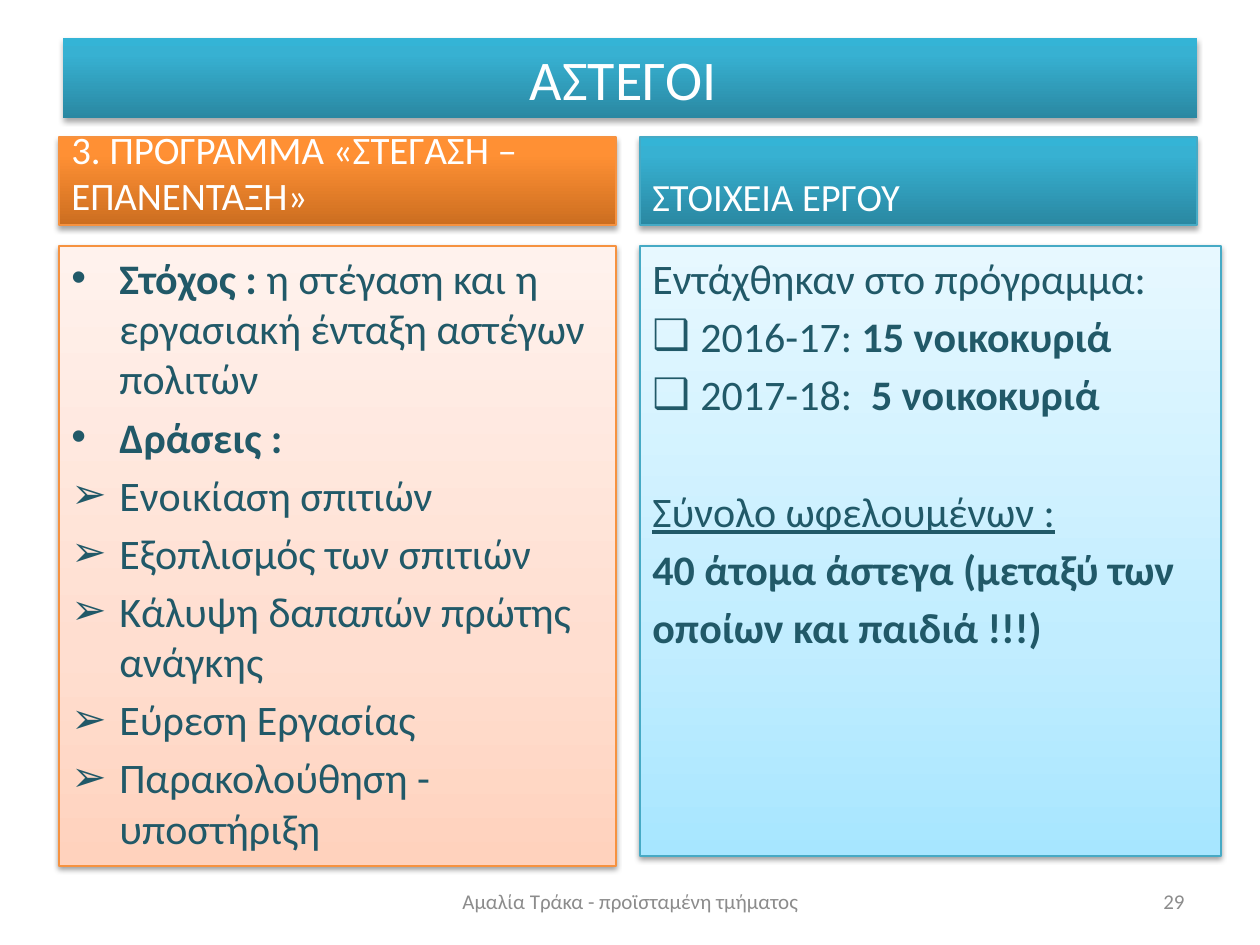
from dataclasses import dataclass
from typing import Optional

from lxml import etree
from pptx import Presentation, util as u
from pptx.dml.color import RGBColor
from pptx.enum import shapes, text
from pptx.oxml import ns

EMU_PER_PX = 914400 / 126
FONT = "Calibri"
WHITE, GREY, INK = "FFFFFF", "8C8C8C", "215968"
HANGING = 48
TEAL = ((0, "2A88A2"), (80, "37B1D2"), (100, "34B4D6"))
ORANGE = ((0, "CC6E20"), (80, "FF9034"), (100, "FF9136"))
PALE_TEAL = ((0, "A7E6FF"), (35, "C1EDFF"), (100, "E7F8FF"))
PALE_ORANGE = ((0, "FFD2BD"), (35, "FFDED0"), (100, "FFF2ED"))
TEAL_EDGE, ORANGE_EDGE = "46AAC5", "F69240"
HEADER_TOP, HEADER_HEIGHT, BODY_TOP, COLUMN_WIDTH = 137, 88, 246, 557


@dataclass(frozen=True)
class Run:
    words: str
    bold: bool = False
    underline: bool = False


@dataclass(frozen=True)
class Item:
    runs: tuple[Run, ...]
    bullet: str = ""
    before: float = 4.4


@dataclass(frozen=True)
class Column:
    left: int
    body_width: int
    body_height: int
    heading: str
    heading_size: float
    heading_fill: tuple
    body_fill: tuple
    edge: str
    items: tuple[Item, ...]


COLUMNS = (
    Column(59, COLUMN_WIDTH, 620, "3. ΠΡΟΓΡΑΜΜΑ «ΣΤΕΓΑΣΗ – ΕΠΑΝΕΝΤΑΞΗ»", 22.2,
           ORANGE, PALE_ORANGE, ORANGE_EDGE, (
               Item((Run("Στόχος :", bold=True),
                     Run(" η στέγαση και η εργασιακή ένταξη αστέγων πολιτών")), "•"),
               Item((Run("Δράσεις :", bold=True),), "•"),
               Item((Run("Ενοικίαση σπιτιών"),), "➢"),
               Item((Run("Εξοπλισμός των σπιτιών"),), "➢"),
               Item((Run("Κάλυψη δαπαπών πρώτης ανάγκης"),), "➢"),
               Item((Run("Εύρεση Εργασίας"),), "➢"),
               Item((Run("Παρακολούθηση - υποστήριξη"),), "➢"))),
    Column(640, 581, 610, "ΣΤΟΙΧΕΙΑ ΕΡΓΟΥ", 22,
           TEAL, PALE_TEAL, TEAL_EDGE, (
               Item((Run("Εντάχθηκαν στο πρόγραμμα:"),)),
               Item((Run("2016-17: "), Run("15 νοικοκυριά", bold=True)), "❑"),
               Item((Run("2017-18:  "), Run("5 νοικοκυριά", bold=True)), "❑"),
               Item((Run("Σύνολο ωφελουμένων :", underline=True),), before=38),
               Item((Run("40 άτομα άστεγα (μεταξύ των", bold=True),)),
               Item((Run("οποίων και παιδιά !!!)", bold=True),)))),
)


def px(length: int) -> u.Emu:
    return u.Emu(round(length * EMU_PER_PX))


def rgb(colour: str) -> RGBColor:
    return RGBColor.from_string(colour)


def add_xml(parent, tag: str, **attributes):
    return etree.SubElement(parent, ns.qn(tag), attributes)


def fill_upwards(shape, stops: tuple) -> None:
    """Blend the stops from the bottom edge to the top edge."""
    shape.fill.gradient()
    shape.fill.gradient_angle = 90
    stop_list = shape.element.spPr.find(".//" + ns.qn("a:gsLst"))
    for old_stop in list(stop_list):
        stop_list.remove(old_stop)
    for position, colour in stops:
        stop = add_xml(stop_list, "a:gs", pos=str(position * 1000))
        add_xml(stop, "a:srgbClr", val=colour)


def drop_shadow(shape, opacity: int, distance: float) -> None:
    shape.shadow.inherit = False
    effects = shape.element.spPr.find(ns.qn("a:effectLst"))
    shadow = add_xml(effects, "a:outerShdw", blurRad=str(u.Pt(3.1)),
                     dist=str(u.Pt(distance)), dir="5400000", rotWithShape="0")
    colour = add_xml(shadow, "a:srgbClr", val="000000")
    add_xml(colour, "a:alpha", val=str(opacity * 1000))


def add_panel(slide, left: int, top: int, width: int, height: int, stops: tuple,
              edge: Optional[str] = None, opacity: int = 35, distance: float = 1.8):
    panel = slide.shapes.add_shape(shapes.MSO_SHAPE.RECTANGLE,
                                   px(left), px(top), px(width), px(height))
    fill_upwards(panel, stops)
    if edge:
        panel.line.color.rgb = rgb(edge)
        panel.line.width = u.Pt(0.75)
    else:
        panel.line.fill.background()
    drop_shadow(panel, opacity, distance)
    return panel


def write(shape, items: tuple[Item, ...], *, size: float, colour: str,
          align=text.PP_ALIGN.LEFT, anchor=text.MSO_ANCHOR.MIDDLE,
          hanging: int = 0) -> None:
    frame = shape.text_frame
    frame.word_wrap = True
    frame.vertical_anchor = anchor
    for number, item in enumerate(items):
        paragraph = frame.add_paragraph() if number else frame.paragraphs[0]
        properties = paragraph._p.get_or_add_pPr()
        if hanging:
            properties.set("marL", str(px(hanging)))
            properties.set("indent", str(-px(hanging)))
        if item.bullet:
            add_xml(properties, "a:buFont", typeface="Arial")
            add_xml(properties, "a:buChar", char=item.bullet)
        else:
            add_xml(properties, "a:buNone")
        paragraph.alignment = align
        if number:
            paragraph.space_before = u.Pt(item.before)
        for part in item.runs:
            run = paragraph.add_run()
            run.text = part.words
            run.font.name = FONT
            run.font.size = u.Pt(size)
            run.font.color.rgb = rgb(colour)
            run.font.bold = part.bold
            run.font.underline = part.underline


def line(words: str) -> tuple[Item, ...]:
    return (Item((Run(words),)),)


def draw_column(slide, column: Column) -> None:
    heading = add_panel(slide, column.left, HEADER_TOP, COLUMN_WIDTH, HEADER_HEIGHT,
                        column.heading_fill, column.edge)
    write(heading, line(column.heading), size=column.heading_size, colour=WHITE,
          anchor=text.MSO_ANCHOR.BOTTOM)
    body = add_panel(slide, column.left, BODY_TOP, column.body_width,
                     column.body_height, column.body_fill, column.edge,
                     opacity=38, distance=1.6)
    write(body, column.items, size=24, colour=INK,
          anchor=text.MSO_ANCHOR.TOP, hanging=HANGING)


def draw_footer(slide, left: int, width: int, words: str, align) -> None:
    footer = slide.shapes.add_textbox(px(left), px(876), px(width), px(50))
    write(footer, line(words), size=12, colour=GREY, align=align)


def main() -> None:
    deck = Presentation()
    deck.slide_width, deck.slide_height = px(1260), px(945)
    slide = deck.slides.add_slide(deck.slide_layouts[6])
    title = add_panel(slide, 63, 38, 1134, 80, TEAL)
    write(title, line("ΑΣΤΕΓΟΙ "), size=32, colour=WHITE, align=text.PP_ALIGN.CENTER)
    for column in COLUMNS:
        draw_column(slide, column)
    draw_footer(slide, 431, 399, "Αμαλία Τράκα - προϊσταμένη τμήματος",
                text.PP_ALIGN.CENTER)
    draw_footer(slide, 903, 294, "29", text.PP_ALIGN.RIGHT)
    deck.save("out.pptx")


if __name__ == "__main__":
    main()
